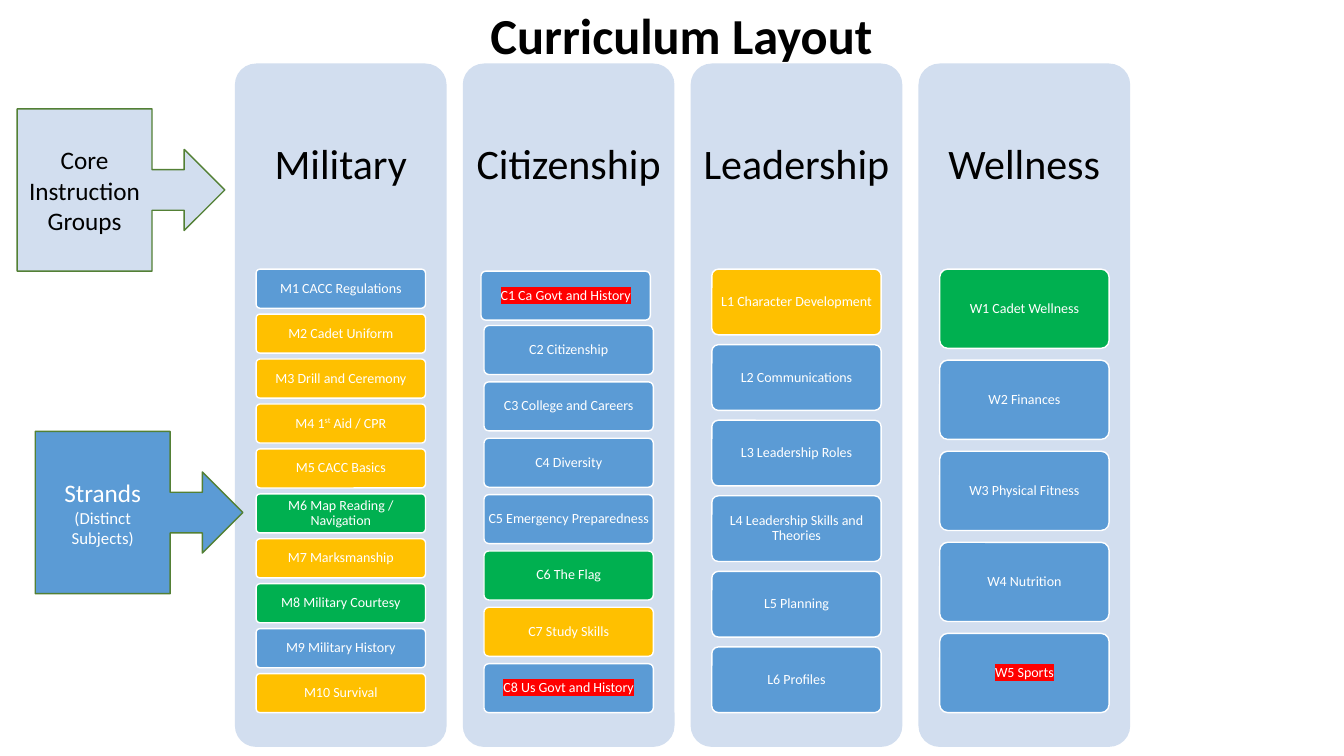
import pptx
import pptx.util
import pptx.dml.color
import pptx.enum.shapes
import pptx.enum.text
import pptx.oxml
import pptx.oxml.ns
import lxml.etree

Inches = pptx.util.Inches
Pt = pptx.util.Pt
Shape = pptx.enum.shapes.MSO_SHAPE


class Theme:
    font = "Calibri"
    panel = "D2DEEF"
    blue = "5B9BD5"
    amber = "FFC000"
    green = "00B050"
    alert = "FF0000"
    callout_line = "538035"
    white = "FFFFFF"
    black = "000000"
    title_size = 36
    heading_size = 30
    callout_size = 18
    note_size = 12
    strand_size = 10


def style_text(shape, runs, size, color, insets=(0.1, 0.05), spacing=None):
    """Fill the shape's single centred paragraph with runs and return it."""
    frame = shape.text_frame
    frame.word_wrap = True
    frame.vertical_anchor = pptx.enum.text.MSO_ANCHOR.MIDDLE
    frame.margin_left = frame.margin_right = Inches(insets[0])
    frame.margin_top = frame.margin_bottom = Inches(insets[1])
    paragraph = frame.paragraphs[0]
    paragraph.alignment = pptx.enum.text.PP_ALIGN.CENTER
    paragraph.line_spacing = spacing
    paragraph.font.name = Theme.font
    paragraph.font.size = Pt(size)
    paragraph.font.color.rgb = pptx.dml.color.RGBColor.from_string(color)
    for text in runs:
        paragraph.add_run().text = text
    return paragraph


def add_block(kind, left, top, width, height, fill, line=None):
    block = slide.shapes.add_shape(
        kind, Inches(left), Inches(top), Inches(width), Inches(height))
    block.shadow.inherit = False
    block.fill.solid()
    block.fill.fore_color.rgb = pptx.dml.color.RGBColor.from_string(fill)
    if line:
        block.line.color.rgb = pptx.dml.color.RGBColor.from_string(line)
        block.line.width = Pt(1)
    else:
        block.line.fill.background()
    if kind == Shape.ROUNDED_RECTANGLE:
        block.adjustments[0] = 0.1
    return block


presentation = pptx.Presentation()
presentation.slide_width = Inches(13.33)
presentation.slide_height = Inches(7.5)
slide = presentation.slides.add_slide(presentation.slide_layouts[6])

groups = {
    "Military": [
        ("M1 CACC Regulations", Theme.blue),
        ("M2 Cadet Uniform", Theme.amber),
        ("M3 Drill and Ceremony", Theme.amber),
        ("M4 1|st| Aid / CPR", Theme.amber),
        ("M5 CACC Basics", Theme.amber),
        ("M6 Map Reading / Navigation", Theme.green),
        ("M7 Marksmanship", Theme.amber),
        ("M8 Military Courtesy", Theme.green),
        ("M9 Military History", Theme.blue),
        ("M10 Survival", Theme.amber),
    ],
    "Citizenship": [
        ("C1 Ca Govt and History", Theme.blue),
        ("C2 Citizenship", Theme.blue),
        ("C3 College and Careers", Theme.blue),
        ("C4 Diversity", Theme.blue),
        ("C5 Emergency Preparedness", Theme.blue),
        ("C6 The Flag", Theme.green),
        ("C7 Study Skills", Theme.amber),
        ("C8 Us Govt and History", Theme.blue),
    ],
    "Leadership": [
        ("L1 Character Development", Theme.amber),
        ("L2 Communications", Theme.blue),
        ("L3 Leadership Roles", Theme.blue),
        ("L4 Leadership Skills and Theories", Theme.blue),
        ("L5 Planning", Theme.blue),
        ("L6 Profiles", Theme.blue),
    ],
    "Wellness": [
        ("W1 Cadet Wellness", Theme.green),
        ("W2 Finances", Theme.blue),
        ("W3 Physical Fitness", Theme.blue),
        ("W4 Nutrition", Theme.blue),
        ("W5 Sports", Theme.blue),
    ],
}
highlighted = {"C1 Ca Govt and History", "C8 Us Govt and History", "W5 Sports"}
nudges = {"C1 Ca Govt and History": (-0.03, 0.02)}

group_top, group_width, group_height, group_pitch = 0.63, 2.1, 6.78, 2.26
strands_top, strands_height = 2.67, 4.4
gap_ratio = 0.15  # gap between strands as a share of a strand's height

for column, (group, strands) in enumerate(groups.items()):
    group_left = 2.33 + column * group_pitch
    add_block(Shape.ROUNDED_RECTANGLE, group_left, group_top,
              group_width, group_height, Theme.panel)
    heading = slide.shapes.add_textbox(
        Inches(group_left), Inches(group_top), Inches(group_width), Inches(2.03))
    style_text(heading, [group], Theme.heading_size, Theme.black, (0.12, 0.12), 0.9)

    count = len(strands)
    strand_height = strands_height / (count + (count - 1) * gap_ratio)
    for row, (label, fill) in enumerate(strands):
        shift_x, shift_y = nudges.get(label, (0, 0))
        strand = add_block(
            Shape.ROUNDED_RECTANGLE, group_left + 0.21 + shift_x,
            strands_top + row * strand_height * (1 + gap_ratio) + shift_y,
            1.68, strand_height, fill, Theme.white)
        paragraph = style_text(strand, label.split("|"), Theme.strand_size,
                               Theme.white, (0.03, 0.02), 0.9)
        if len(paragraph.runs) > 1:
            paragraph.runs[1].font._element.set("baseline", "30000")
        if label in highlighted:
            highlight = lxml.etree.SubElement(
                paragraph.runs[0].font._element, pptx.oxml.ns.qn("a:highlight"))
            lxml.etree.SubElement(
                highlight, pptx.oxml.ns.qn("a:srgbClr"), val=Theme.alert)

core_groups = add_block(Shape.RIGHT_ARROW_CALLOUT, 0.17, 1.08, 2.06, 1.61,
                        Theme.panel, Theme.callout_line)
style_text(core_groups, ["Core Instruction Groups"], Theme.callout_size, Theme.black)

strands_callout = add_block(Shape.RIGHT_ARROW_CALLOUT, 0.35, 4.28, 2.06, 1.61,
                            Theme.blue, Theme.callout_line)
strands_text = style_text(strands_callout, ["Strands ", "(Distinct Subjects)"],
                          Theme.callout_size, Theme.white)
strands_text.runs[1].font.size = Pt(Theme.note_size)

title = slide.shapes.add_textbox(Inches(2.41), Inches(-0.01), Inches(8.7), Inches(0.71))
title_text = style_text(title, ["Curriculum Layout"], Theme.title_size, Theme.black)
title_text.font.bold = True

presentation.save("out.pptx")
